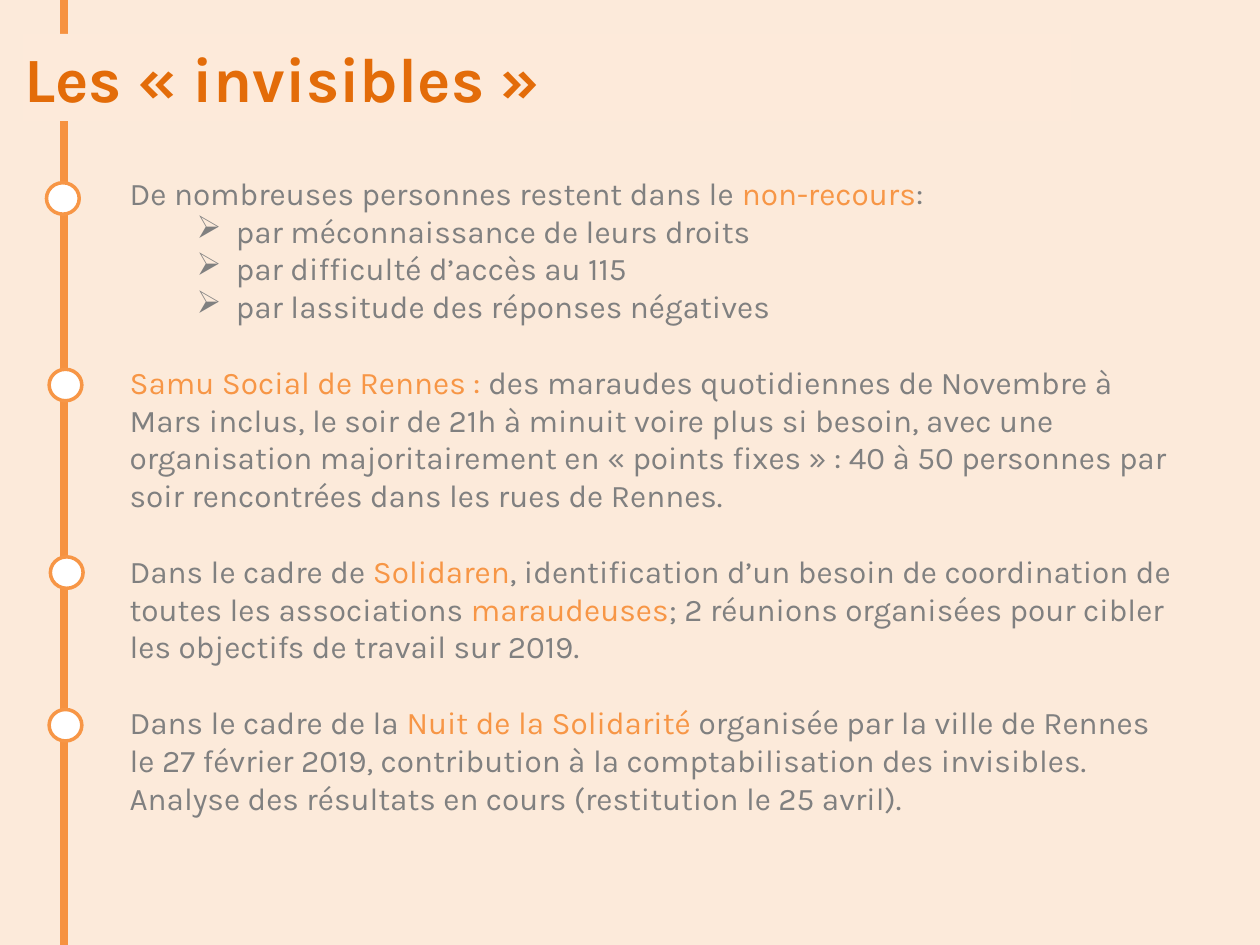
"""Build the slide on people who do not claim the help they could get."""
from dataclasses import dataclass

from lxml import etree
from pptx import Presentation
from pptx.dml.color import RGBColor
from pptx.enum.shapes import MSO_CONNECTOR, MSO_SHAPE
from pptx.enum.text import MSO_ANCHOR, MSO_AUTO_SIZE, PP_ALIGN
from pptx.oxml.ns import qn
from pptx.util import Pt

LINE = MSO_CONNECTOR.STRAIGHT
OVAL = MSO_SHAPE.OVAL
MIDDLE = MSO_ANCHOR.MIDDLE
FIXED = MSO_AUTO_SIZE.NONE
GROW = MSO_AUTO_SIZE.SHAPE_TO_FIT_TEXT
LEFT = PP_ALIGN.LEFT
FONT = "Karla"
CREAM, PALE, WHITE = "FCEADA", "FDEADA", "FFFFFF"
ORANGE, RAIL, DARK, GREY = "F79646", "F69240", "E36C09", "808080"
GAP = 21.6


@dataclass
class Ring:
    left: float
    top: float


@dataclass
class Item:
    runs: list[tuple[str, str]]
    gap: float = 0
    arrow: bool = False


RINGS = [Ring(26.6, 104.4), Ring(28.1, 211), Ring(28.8, 318.2), Ring(28.1, 405.4)]
REASONS = ["par méconnaissance de leurs droits", "par difficulté d’accès au 115",
           "par lassitude des réponses négatives"]
ITEMS = [
    Item([("De nombreuses personnes restent dans le ", GREY),
          ("non-recours", ORANGE), (":", GREY)]),
    *[Item([(reason, GREY)], arrow=True) for reason in REASONS],
    Item([("Samu Social de Rennes : ", ORANGE),
          ("des maraudes quotidiennes de Novembre à Mars inclus, le soir de 21h "
           "à minuit voire plus si besoin, avec une organisation majoritairement "
           "en « points fixes » : 40 à 50 personnes par soir rencontrées dans "
           "les rues de Rennes.", GREY)], GAP),
    Item([("Dans le cadre de ", GREY), ("Solidaren", ORANGE),
          (", identification d’un besoin de coordination de toutes les "
           "associations ", GREY), ("maraudeuses", ORANGE),
          ("; 2 réunions organisées pour cibler les objectifs de travail "
           "sur 2019.", GREY)], GAP),
    Item([("Dans le cadre de la ", GREY), ("Nuit de la Solidarité ", ORANGE),
          ("organisée par la ville de Rennes le 27 février 2019, contribution à "
           "la comptabilisation des invisibles. Analyse des résultats en cours "
           "(restitution le 25 avril).", GREY)], GAP),
]


def paint(fill, tone: str) -> None:
    fill.solid()
    fill.fore_color.rgb = RGBColor.from_string(tone)


def write(para, text: str, *, tone=GREY, size=18, bold=False) -> None:
    run = para.add_run()
    run.text = text
    run.font.name, run.font.size, run.font.bold = FONT, Pt(size), bold
    paint(run.font.fill, tone)


def place(shape, left: float, top: float, width: float, height: float) -> None:
    shape.left, shape.top = Pt(left), Pt(top)
    shape.width, shape.height = Pt(width), Pt(height)


def add_title(slide):
    title = slide.shapes.title
    place(title, 13, 19.4, 599, 49.7)
    paint(title.fill, PALE)
    frame = title.text_frame
    frame.margin_left = Pt(0.7)
    frame.margin_right = frame.margin_top = frame.margin_bottom = 0
    frame.vertical_anchor, frame.auto_size = MIDDLE, FIXED
    para = frame.paragraphs[0]
    para.alignment, para.line_spacing = LEFT, 1.0
    write(para, "Les « invisibles »", tone=DARK, size=36, bold=True)
    return title


def add_rail(slide, title) -> None:
    rail = slide.shapes.add_connector(LINE, Pt(36.6), 0, Pt(36.6), Pt(540))
    rail.line.width = Pt(4.56)
    paint(rail.line.fill, RAIL)
    etree.SubElement(rail._element.spPr, qn("a:effectLst"))
    title._element.addprevious(rail._element)


def add_arrow(para) -> None:
    props = para._p.get_or_add_pPr()
    props.set("marL", str(Pt(60.75)))
    props.set("indent", str(Pt(-22.5)))
    etree.SubElement(props, qn("a:buChar"), char="➢")


def add_body(slide, items: list[Item]) -> None:
    box = slide.shapes.add_textbox(Pt(67), Pt(95.8), Pt(612), Pt(378))
    frame = box.text_frame
    frame.word_wrap, frame.auto_size = True, GROW
    for rank, item in enumerate(items):
        para = frame.add_paragraph() if rank else frame.paragraphs[0]
        if item.arrow:
            add_arrow(para)
        if item.gap:
            para.space_before = Pt(item.gap)
        for text, tone in item.runs:
            write(para, text, tone=tone)


def add_ring(slide, ring: Ring) -> None:
    dot = slide.shapes.add_shape(OVAL, 0, 0, 0, 0)
    place(dot, ring.left, ring.top, 18.7, 18)
    dot.shadow.inherit = False
    paint(dot.fill, WHITE)
    dot.line.width = Pt(2)
    paint(dot.line.fill, ORANGE)


def main() -> None:
    deck = Presentation()
    deck.slide_width, deck.slide_height = Pt(720), Pt(540)
    slide = deck.slides.add_slide(deck.slide_layouts[5])
    paint(slide.background.fill, CREAM)
    add_rail(slide, add_title(slide))
    add_body(slide, ITEMS)
    for ring in RINGS:
        add_ring(slide, ring)
    deck.save("out.pptx")


if __name__ == "__main__":
    main()
